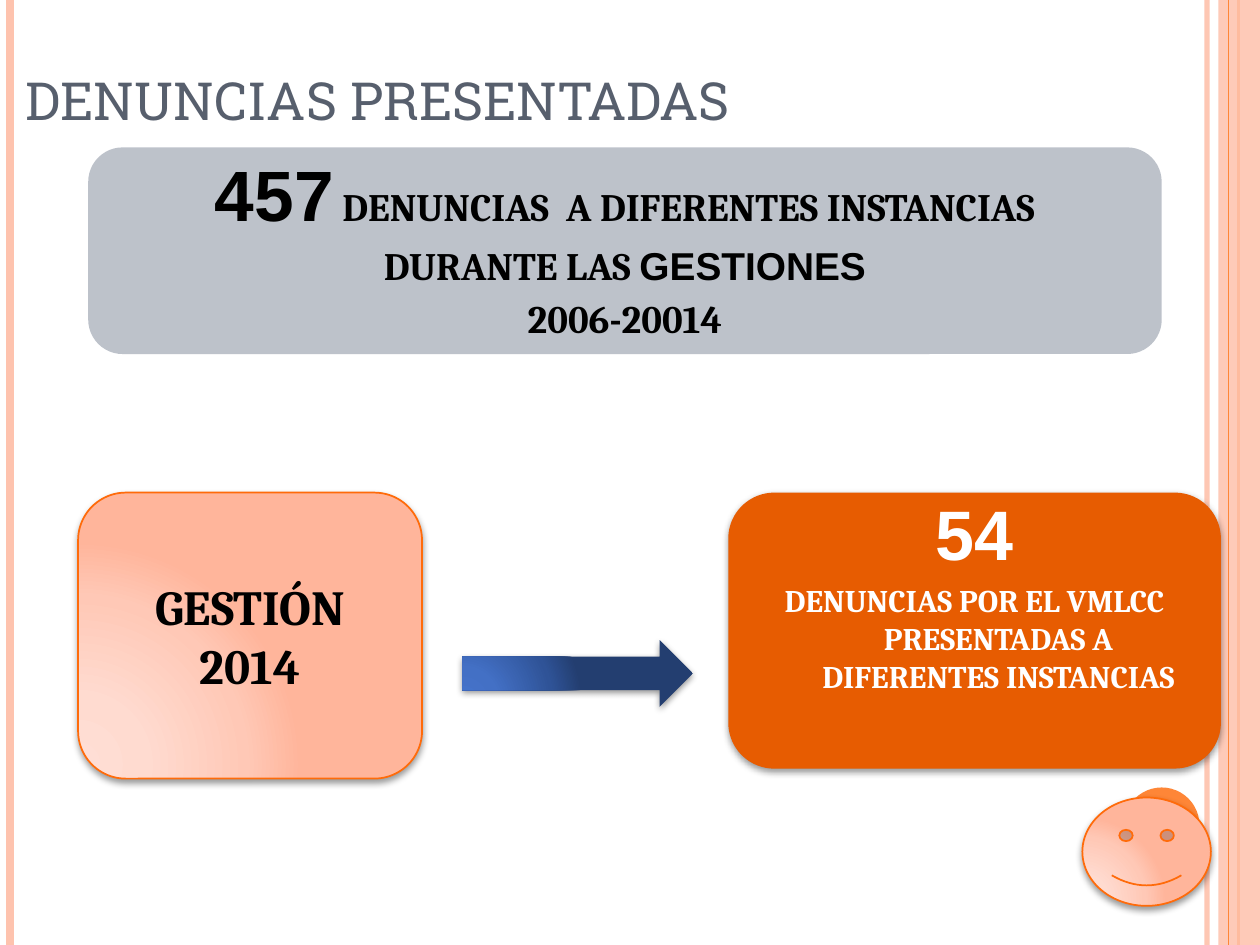
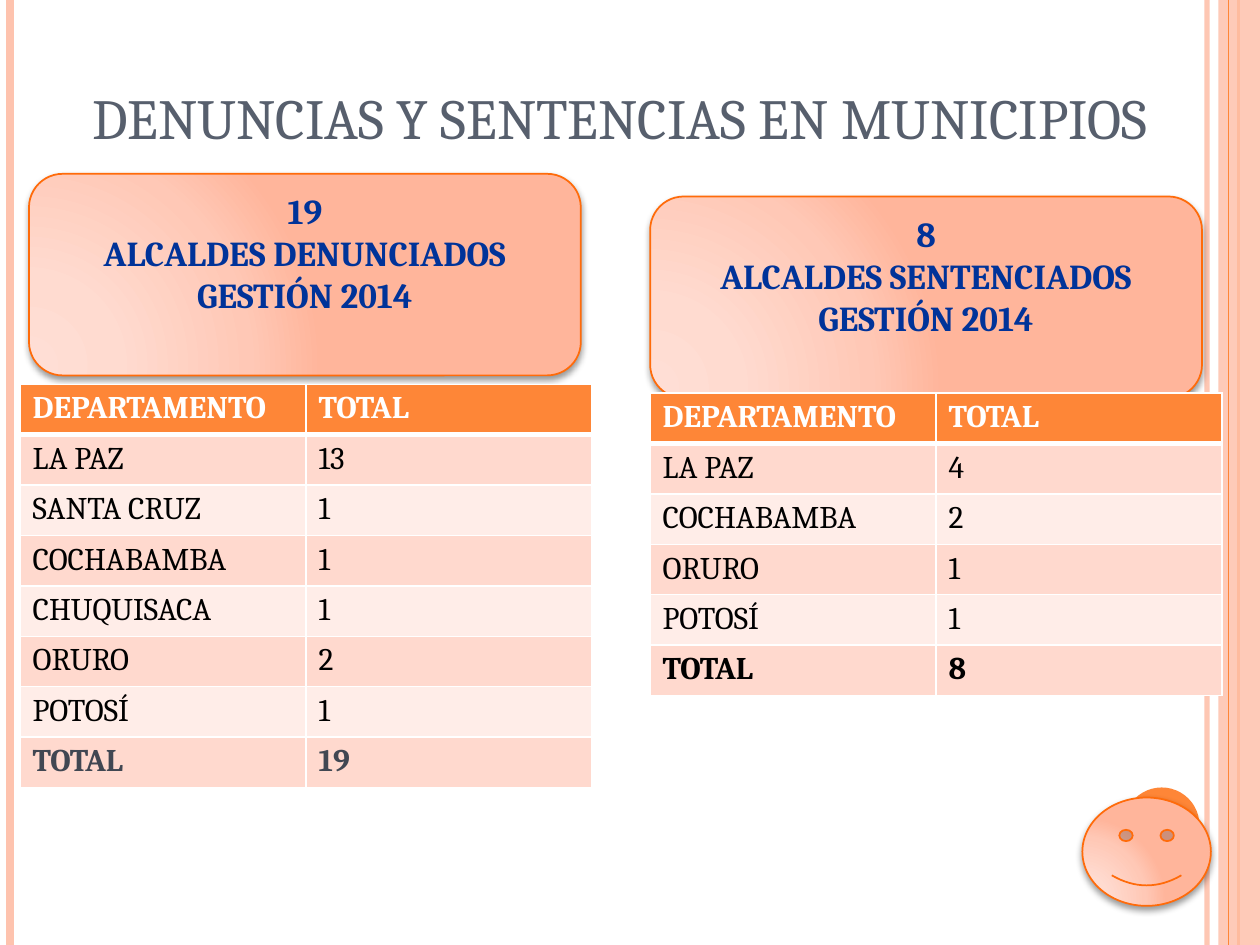
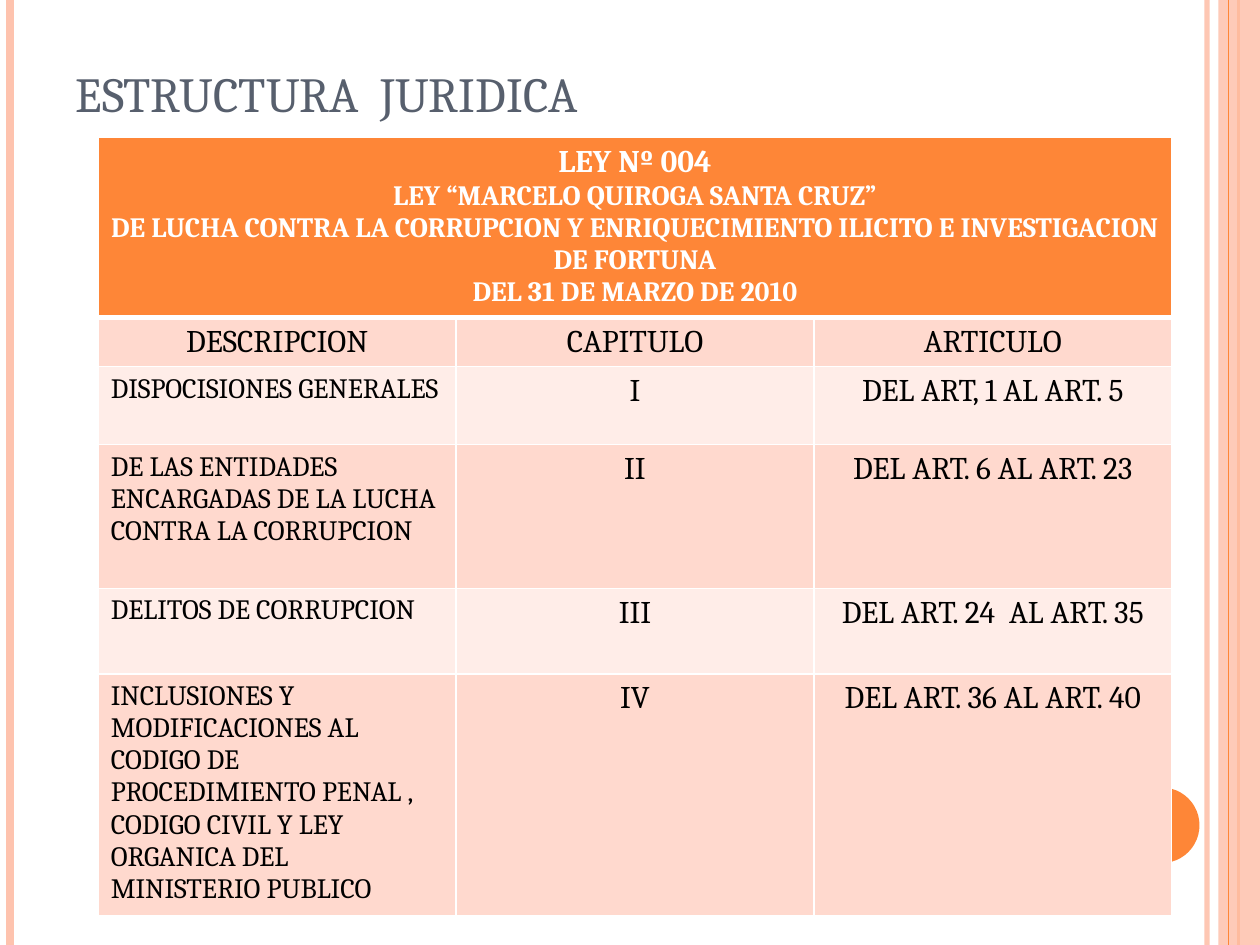
from dataclasses import dataclass

from lxml import etree
from pptx import Presentation
from pptx.dml.color import RGBColor
from pptx.enum import shapes, text
from pptx.oxml import ns, parse_xml
from pptx.util import Inches, Pt

SHAPE = shapes.MSO_SHAPE
ALIGN = text.PP_ALIGN
ANCHOR = text.MSO_ANCHOR


@dataclass(frozen=True)
class Face:
    size: float
    color: str = "000000"
    bold: bool = False
    name: str = "Cambria"


@dataclass(frozen=True)
class Theme:
    orange: str = "FE8637"
    peach: str = "FEC3AE"
    edge: str = "FF6B0A"
    gray: str = "B9BEC7"
    rust: str = "E75C01"
    white: str = "FFFFFF"
    rows: tuple = ("FFEDE8", "FFD9CE")
    warm: tuple = ("FFDED5", "FFDBD0", "FFC8B6", "FFB59B")
    blue: tuple = ("4574CC", "4370C5", "2F5397", "233E70")
    stops: tuple = (0, 30, 75, 100)
    slate: str = "575F6D"
    head: Face = Face(18, "FFFFFF", True)
    law: Face = Face(16, "FFFFFF", True)
    cell: Face = Face(18)
    small: Face = Face(16)
    total: Face = Face(18, "000000", True)
    muted: Face = Face(18, "414752", True)
    count: Face = Face(20, "003399", True)
    year: Face = Face(28, "000000", True)
    lead: Face = Face(22.2, "000000", True)
    lead_sans: Face = Face(22.2, "000000", True, "Arial")
    lead_big: Face = Face(40.7, "000000", True, "Arial")
    big: Face = Face(40, "FFFFFF", True, "Arial")


def paint(font, face):
    font.size = Pt(face.size)
    font.name = face.name
    font.bold = face.bold
    font.color.rgb = RGBColor.from_string(face.color)


def child(node, tag, **attrs):
    return etree.SubElement(node, ns.qn(tag), {k: str(v) for k, v in attrs.items()})


def fade(node, alpha):
    for color in node.iter(ns.qn("a:srgbClr")):
        child(color, "a:alpha", val=alpha * 1000)


class Deck:
    def __init__(self, theme):
        self.theme = theme
        self.file = Presentation()
        self.file.slide_width = Inches(10)
        self.file.slide_height = Inches(7.5)
        self.slide = None

    def page(self, layout=5):
        self.slide = self.file.slides.add_slide(self.file.slide_layouts[layout])

    def place(self, item, box):
        item.left, item.top, item.width, item.height = map(Inches, box)

    def label(self, frame, lines, align=ALIGN.CENTER, hang=0, before=0, space=None):
        frame.word_wrap = True
        for i, line in enumerate(lines):
            para = frame.add_paragraph() if i else frame.paragraphs[0]
            para.alignment = align
            runs = line if isinstance(line, list) else [line]
            para.space_before = Pt(before * runs[0][1].size if before < 1 else before)
            if space:
                para.line_spacing = space
            if hang:
                props = para._p.get_or_add_pPr()
                props.set("marL", str(Inches(hang)))
                props.set("indent", str(-Inches(hang)))
            same = len({face for _, face in runs}) == 1
            for words, face in runs:
                run = para.add_run()
                run.text = words
                if not same:
                    paint(run.font, face)
            if same:
                paint(para.font, runs[0][1])

    def title(self, words, box, size, font="Cambria", align=ALIGN.LEFT, right=0.1):
        item = self.slide.shapes.title
        self.place(item, box)
        frame = item.text_frame
        frame.auto_size = text.MSO_AUTO_SIZE.NONE
        frame.vertical_anchor = ANCHOR.BOTTOM
        frame.margin_right = Inches(right)
        self.label(frame, [(words, Face(size, self.theme.slate, name=font))], align)

    def body(self, lines, box):
        item = self.slide.placeholders[1]
        self.place(item, box)
        geom = child(item.element.spPr, "a:prstGeom", prst="roundRect")
        child(geom, "a:avLst")
        item.fill.solid()
        item.fill.fore_color.rgb = RGBColor.from_string(self.theme.gray)
        fade(item.element.spPr, 93)
        frame = item.text_frame
        frame.auto_size = text.MSO_AUTO_SIZE.NONE
        frame.vertical_anchor = ANCHOR.MIDDLE
        self.label(frame, lines, hang=0.3, before=6, space=0.9)
        for para in frame.paragraphs:
            para._p.pPr.insert_element_before(
                parse_xml(f"<a:buNone {ns.nsdecls('a')}/>"), "a:tabLst", "a:defRPr")

    def shape(self, kind, box, fill, edge=None, alpha=None, drop=None):
        item = self.slide.shapes.add_shape(kind, *map(Inches, box))
        props = item.element.spPr
        if isinstance(fill, str):
            item.fill.solid()
            item.fill.fore_color.rgb = RGBColor.from_string(fill)
        else:
            item.fill.background()
            props.replace(props.find(ns.qn("a:noFill")), self.glow(fill))
        if edge:
            item.line.color.rgb = RGBColor.from_string(edge)
            item.line.width = Pt(1)
        else:
            item.line.fill.background()
        if alpha:
            fade(props, alpha)
        item.shadow.inherit = False
        if drop:
            dist, dark = drop
            shade = child(props.find(ns.qn("a:effectLst")), "a:outerShdw", blurRad=Pt(4),
                          dist=Pt(dist), dir=5400000, rotWithShape=0)
            child(shade, "a:srgbClr", val="000000")
            fade(shade, dark)
        return item

    def glow(self, colors):
        grad = etree.Element(ns.qn("a:gradFill"), rotWithShape="1")
        stops = child(grad, "a:gsLst")
        for pos, color in zip(self.theme.stops, colors):
            child(child(stops, "a:gs", pos=pos * 1000), "a:srgbClr", val=color)
        child(child(grad, "a:path", path="circle"), "a:fillToRect",
              l=5000, t=100000, r=120000, b=10000)
        return grad

    def warm(self, kind, box):
        return self.shape(kind, box, self.theme.warm, self.theme.edge, drop=(2, 40))

    def smile(self):
        self.warm(SHAPE.SMILEY_FACE, (8.59, 6.33, 1.02, 0.86))

    def rule(self, x, color, width, alpha=None):
        line = self.slide.shapes.add_connector(
            shapes.MSO_CONNECTOR.STRAIGHT, Inches(x), 0, Inches(x), Inches(7.5))
        line.line.color.rgb = RGBColor.from_string(color)
        line.line.width = Pt(width)
        props = line.element.spPr
        if alpha:
            fade(props, alpha)
        child(props, "a:effectLst")
        return line

    def bands(self):
        look = self.theme
        items = [
            self.rule(9.58, look.peach, 3, 93),
            self.rule(0.08, look.peach, 4.5),
            self.rule(9.83, look.orange, 1.5),
            self.shape(SHAPE.RECTANGLE, (9.67, 0, 0.33, 7.5), look.peach, alpha=87),
            self.rule(9.75, look.orange, 0.75),
            self.shape(SHAPE.OVAL, (8.92, 6.25, 0.6, 0.6), look.orange),
        ]
        tree = self.file.slide_master.shapes.element
        for item in items:
            tree.append(item.element)

    def border(self, cell, head):
        props = cell._tc.get_or_add_tcPr()
        for i, side in enumerate("LRTB"):
            width = 3 if head and side == "B" else 1
            line = etree.Element(ns.qn(f"a:ln{side}"), w=str(Pt(width)))
            child(child(line, "a:solidFill"), "a:srgbClr", val=self.theme.white)
            props.insert(i, line)

    def table(self, spot, wide, highs, rows):
        count = len(rows[-1])
        grid = self.slide.shapes.add_table(
            len(rows), count, *map(Inches, (*spot, wide * count, sum(highs)))).table
        for col in grid.columns:
            col.width = Inches(wide)
        for r, (row, high) in enumerate(zip(rows, highs)):
            grid.rows[r].height = Inches(high)
            for c in range(count):
                cell = grid.cell(r, c)
                cell.fill.solid()
                color = self.theme.rows[r % 2] if r else self.theme.orange
                cell.fill.fore_color.rgb = RGBColor.from_string(color)
                self.border(cell, r == 0)
                if c < len(row):
                    self.label(cell.text_frame, *row[c])
            if len(row) < count:
                grid.cell(r, 0).merge(grid.cell(r, count - 1))

    def tally(self, spot, data, last):
        look = self.theme
        pairs = [("DEPARTAMENTO", "TOTAL"), *data, ("TOTAL", sum(n for _, n in data))]
        faces = [look.head, *[look.cell] * len(data), last]
        rows = [[([(str(word), face)], ALIGN.LEFT) for word in pair]
                for pair, face in zip(pairs, faces)]
        self.table(spot, 2.27, [0.4] * len(rows), rows)

    def mayors(self, spot, count, fate):
        item = self.warm(SHAPE.ROUNDED_RECTANGLE, (*spot, 4.38, 1.6))
        item.text_frame.vertical_anchor = ANCHOR.TOP
        lines = (count, f"ALCALDES {fate}", "GESTIÓN 2014")
        self.label(item.text_frame, [(line, self.theme.count) for line in lines])


def filed(deck):
    look = deck.theme
    deck.title(" DENUNCIAS PRESENTADAS", (0, 0.23, 10, 0.86), 30, "Roboto Slab")
    deck.body([
        [("457", look.lead_big), (" DENUNCIAS  A DIFERENTES INSTANCIAS", look.lead)],
        [("DURANTE LAS ", look.lead), ("GESTIONES", look.lead_sans)],
        ("2006-20014", look.lead),
    ], (0.7, 1.17, 8.52, 1.64))
    year = deck.warm(SHAPE.ROUNDED_RECTANGLE, (0.62, 3.91, 2.73, 2.27))
    deck.label(year.text_frame, [("GESTIÓN 2014", look.year)])
    deck.shape(SHAPE.RIGHT_ARROW, (3.67, 5.08, 1.83, 0.53), look.blue, drop=(1.6, 42))
    cases = deck.shape(SHAPE.ROUNDED_RECTANGLE, (5.78, 3.91, 3.91, 2.19), look.rust,
                       drop=(1.6, 42))
    cases.text_frame.margin_bottom = Inches(0.65)
    deck.label(cases.text_frame, [
        ("54", look.big),
        ("DENUNCIAS POR EL VMLCC PRESENTADAS A DIFERENTES INSTANCIAS", look.head),
    ], hang=0.38, before=0.2)
    deck.smile()


def towns(deck):
    look = deck.theme
    deck.mayors((0.23, 1.38), "19", "DENUNCIADOS")
    deck.title("DENUNCIAS Y SENTENCIAS EN MUNICIPIOS", (0, 0.36, 10, 0.89), 32.4,
               align=ALIGN.CENTER, right=0.26)
    deck.tally((0.16, 3.05), [
        ("LA PAZ", 13), ("SANTA CRUZ", 1), ("COCHABAMBA", 1),
        ("CHUQUISACA", 1), ("ORURO", 2), ("POTOSÍ", 1),
    ], look.muted)
    deck.mayors((5.16, 1.56), "8", "SENTENCIADOS")
    deck.tally((5.16, 3.12), [
        ("LA PAZ", 4), ("COCHABAMBA", 2), ("ORURO", 1), ("POTOSÍ", 1),
    ], look.total)
    deck.smile()


def law(deck):
    look = deck.theme
    deck.title("ESTRUCTURA  JURIDICA", (0.5, 0.3, 9, 0.72), 28)
    parts = [
        ("DISPOCISIONES GENERALES", "I", "DEL ART, 1 AL ART. 5"),
        ("DE LAS ENTIDADES ENCARGADAS DE LA LUCHA CONTRA LA CORRUPCION", "II",
         "DEL ART. 6 AL ART. 23"),
        ("DELITOS DE CORRUPCION", "III", "DEL ART. 24  AL ART. 35"),
        ("INCLUSIONES Y MODIFICACIONES AL CODIGO DE PROCEDIMIENTO PENAL , "
         "CODIGO CIVIL Y LEY ORGANICA DEL MINISTERIO PUBLICO", "IV",
         "DEL ART. 36 AL ART. 40"),
    ]
    top = [("LEY Nº 004", look.head)] + [(line, look.law) for line in (
        "LEY “MARCELO QUIROGA SANTA CRUZ”",
        "DE LUCHA CONTRA LA CORRUPCION Y ENRIQUECIMIENTO ILICITO E "
        "INVESTIGACION DE FORTUNA",
        "DEL 31 DE MARZO DE 2010")]
    names = ("DESCRIPCION", "CAPITULO", "ARTICULO")
    rows = [[(top,)], [([(name, look.cell)],) for name in names]]
    for theme, *refs in parts:
        rows.append([([(theme, look.small)], ALIGN.LEFT),
                     *[([(ref, look.cell)],) for ref in refs]])
    deck.table((0.78, 1.09), 2.84, (1.43, 0.39, 0.62, 1.14, 0.68, 1.92), rows)


def main():
    deck = Deck(Theme())
    deck.page(1)
    deck.bands()
    filed(deck)
    deck.page()
    towns(deck)
    deck.page()
    law(deck)
    deck.file.save("out.pptx")


if __name__ == "__main__":
    main()
